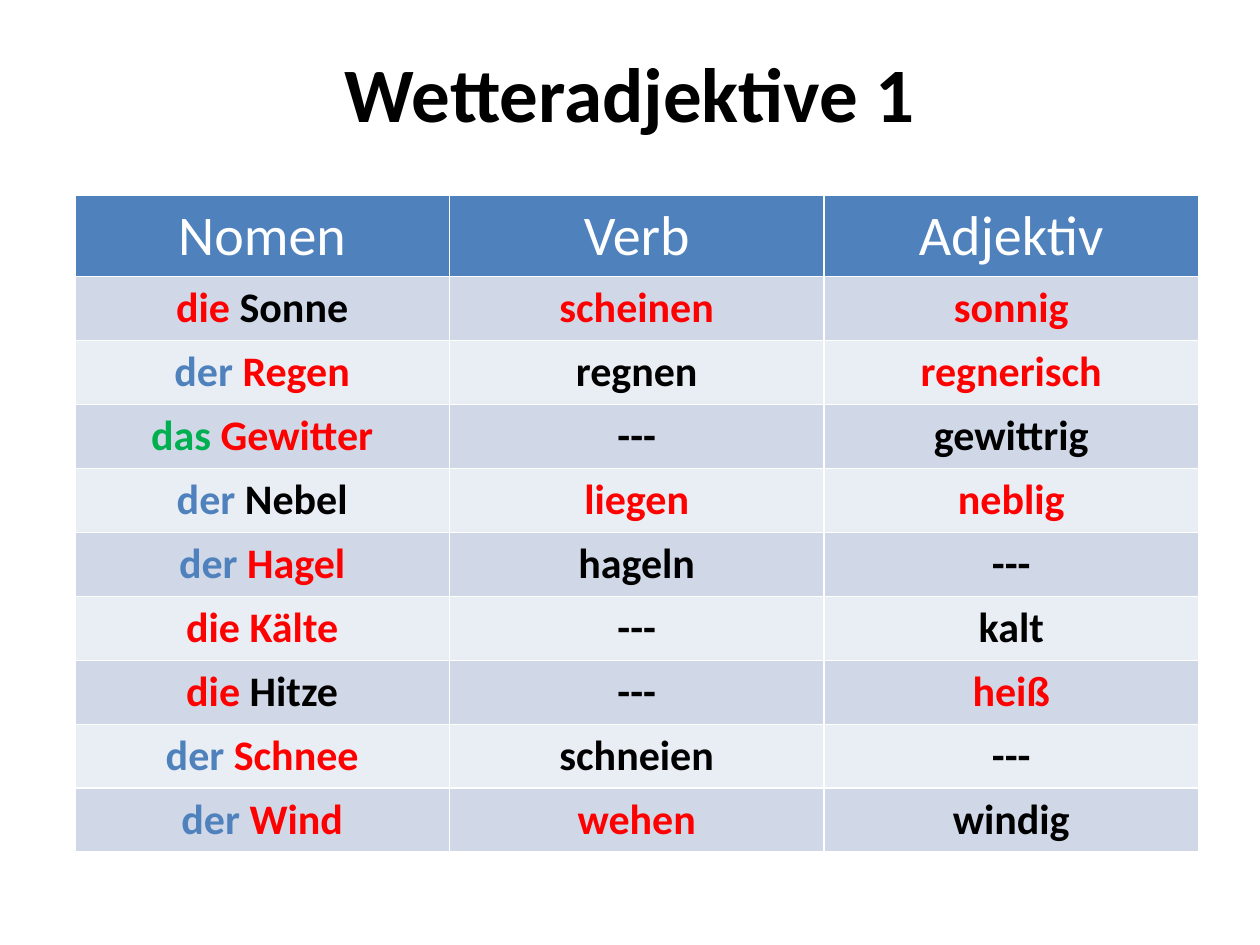
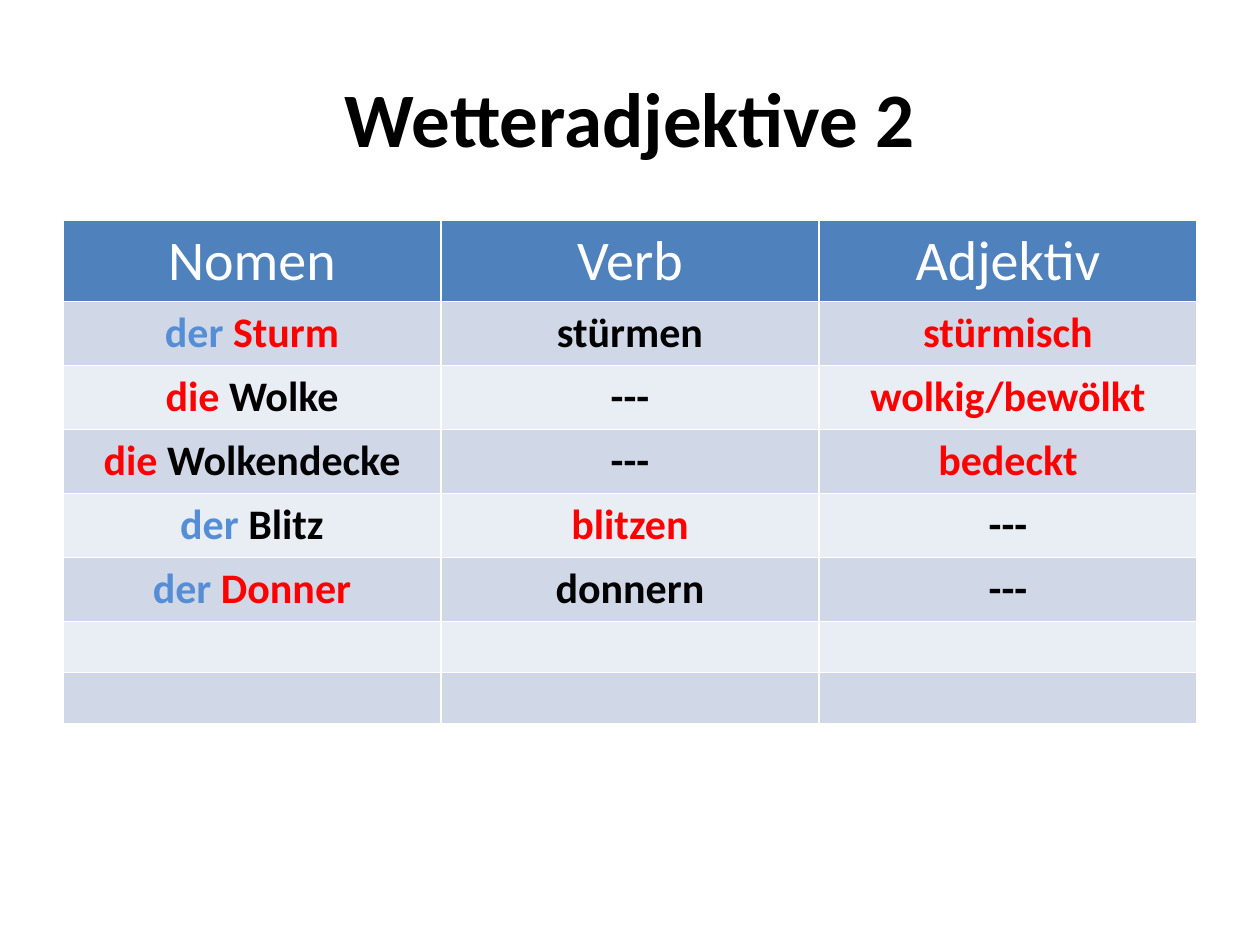
from pptx import Presentation
from pptx.dml.color import RGBColor
from pptx.enum.text import MSO_ANCHOR as Anchor, PP_ALIGN as Align
from pptx.util import Cm, Pt

# Shared style
FONT = "Calibri"
BLACK, WHITE, RED, GREEN = "000000", "FFFFFF", "FF0000", "00B050"
HEADER_FILL = "4F81BD"
BAND_FILLS = ("D0D8E8", "E9EDF4")
HEADINGS = ("Nomen", "Verb", "Adjektiv")
HEADER_HEIGHT, WORD_HEIGHT, EMPTY_HEIGHT = 1.63, 1.29, 1.03

# Word lists: a leading * marks a word set in red
WEATHER_1 = [
    ("die Sonne", "*scheinen", "*sonnig"),
    ("der *Regen", "regnen", "*regnerisch"),
    ("das *Gewitter", "---", "gewittrig"),
    ("der Nebel", "*liegen", "*neblig"),
    ("der *Hagel", "hageln", "---"),
    ("die *Kälte", "---", "kalt"),
    ("die Hitze", "---", "*heiß"),
    ("der *Schnee", "schneien", "---"),
    ("der *Wind", "*wehen", "windig"),
]
WEATHER_2 = [
    ("der *Sturm", "stürmen", "*stürmisch"),
    ("die Wolke", "---", "*wolkig/bewölkt"),
    ("die Wolkendecke", "---", "*bedeckt"),
    ("der Blitz", "*blitzen", "---"),
    ("der *Donner", "donnern", "---"),
    ("", "", ""),
    ("", "", ""),
]


def rgb(color):
    return RGBColor.from_string(color)


def add_span(para, text, size, color, bold=True):
    span = para.add_run()
    span.text = text
    span.font.name = FONT
    span.font.size = Pt(size)
    span.font.bold = bold
    span.font.color.rgb = rgb(color)


def add_title(page, text, height):
    box = page.shapes.add_textbox(Cm(1.27), Cm(0.76), Cm(22.86), Cm(height))
    frame = box.text_frame
    frame.word_wrap = True
    frame.vertical_anchor = Anchor.MIDDLE
    para = frame.paragraphs[0]
    para.alignment = Align.CENTER
    add_span(para, text, 44, BLACK)


def start_cell(cell, fill):
    """Fill a cell and return its centred paragraph."""
    cell.fill.solid()
    cell.fill.fore_color.rgb = rgb(fill)
    para = cell.text_frame.paragraphs[0]
    para.alignment = Align.CENTER
    return para


def write_word(para, entry, articles):
    """Write an entry with its article, if any, in the colour of its gender."""
    article, gap, word = entry.rpartition(" ")
    if article:
        add_span(para, article + gap, 24, articles[article])
    if word:
        add_span(para, word.lstrip("*"), 24, RED if word.startswith("*") else BLACK)


def add_word_table(page, left, top, column_width, entries, der_color):
    articles = {"der": der_color, "die": RED, "das": GREEN}
    heights = [HEADER_HEIGHT] + [WORD_HEIGHT if any(row) else EMPTY_HEIGHT for row in entries]
    columns = len(HEADINGS)
    table = page.shapes.add_table(len(heights), columns, Cm(left), Cm(top),
                                  Cm(column_width * columns), Cm(sum(heights))).table
    for column in table.columns:
        column.width = Cm(column_width)
    for row, height in zip(table.rows, heights):
        row.height = Cm(height)

    # Header row
    for index, heading in enumerate(HEADINGS):
        para = start_cell(table.cell(0, index), HEADER_FILL)
        add_span(para, heading, 32, WHITE, bold=False)

    # Banded word rows
    for row_index, row_entries in enumerate(entries):
        for index, entry in enumerate(row_entries):
            para = start_cell(table.cell(row_index + 1, index), BAND_FILLS[row_index % 2])
            write_word(para, entry, articles)


def add_page(deck):
    page = deck.slides.add_slide(deck.slide_layouts[6])
    page.background.fill.solid()
    page.background.fill.fore_color.rgb = rgb(WHITE)
    return page


def main():
    deck = Presentation()
    deck.slide_width, deck.slide_height = Cm(25.4), Cm(19.05)

    # Weather adjectives, part 1
    page = add_page(deck)
    add_title(page, "Wetteradjektive 1", 2.16)
    add_word_table(page, 1.51, 3.94, 7.55, WEATHER_1, "4F81BD")

    # Weather adjectives, part 2
    page = add_page(deck)
    add_title(page, "Wetteradjektive 2", 3.18)
    add_word_table(page, 1.27, 4.45, 7.62, WEATHER_2, "558ED5")

    deck.save("out.pptx")


if __name__ == "__main__":
    main()
